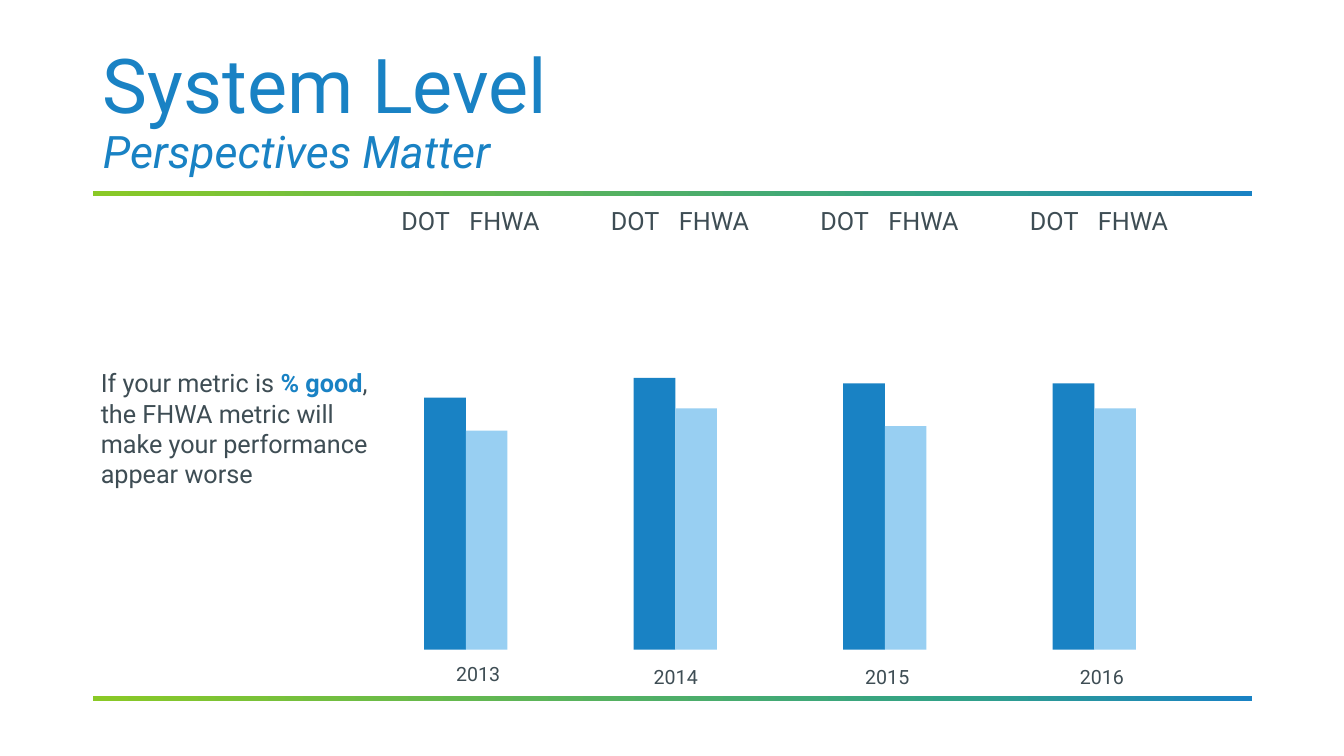
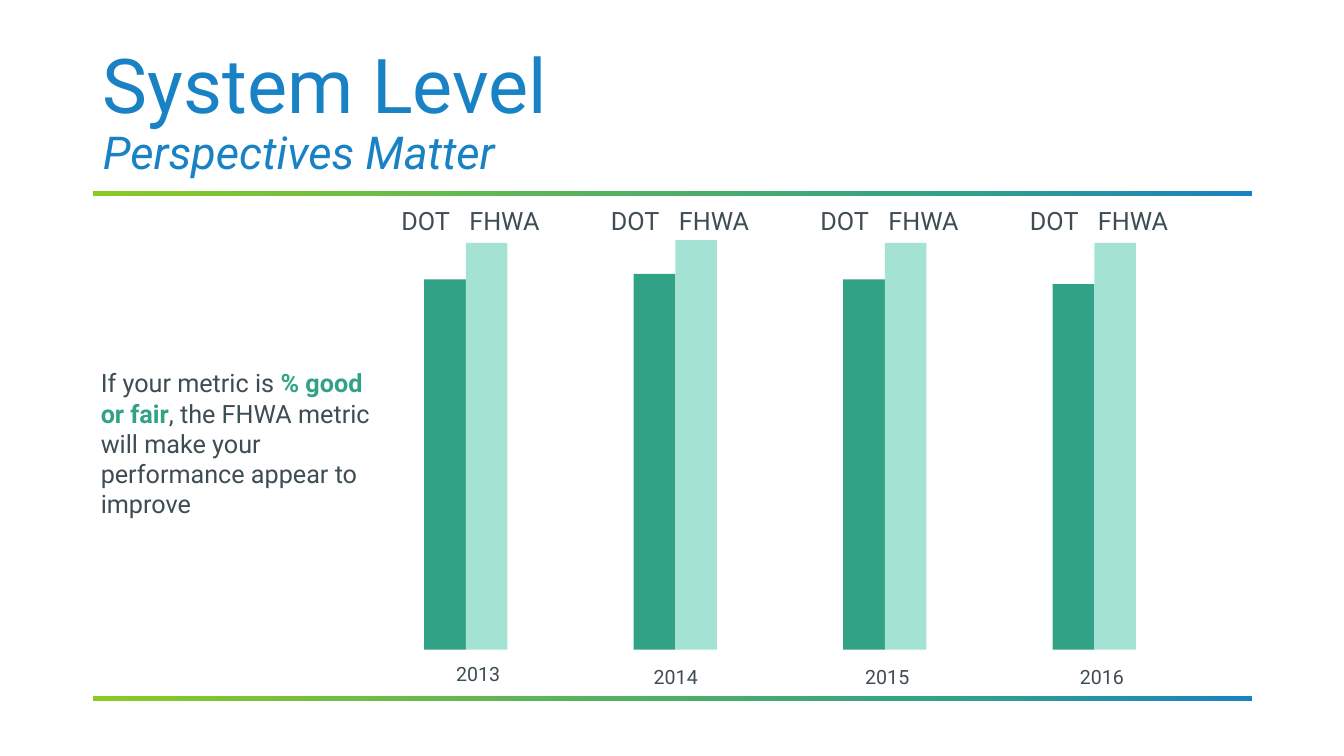
import copy

import pptx
import pptx.dml.color
import pptx.enum.shapes
import pptx.enum.text
import pptx.util

Cm = pptx.util.Cm
RGBColor = pptx.dml.color.RGBColor
Align = pptx.enum.text.PP_ALIGN
Anchor = pptx.enum.text.MSO_ANCHOR

# Shared style
FONT = "Roboto"
LIME = RGBColor(0x8A, 0xC9, 0x26)
GREEN = RGBColor(0x32, 0xA2, 0x87)
BLUE = RGBColor(0x19, 0x82, 0xC4)
PALE_BLUE = RGBColor(0x98, 0xCF, 0xF2)
PALE_GREEN = RGBColor(0xA4, 0xE3, 0xD4)
SLATE = RGBColor(0x3E, 0x4D, 0x54)
BAND_STOPS = [(0, LIME), (0.74, GREEN), (1, BLUE)]

# Shared geometry in centimetres
MARGIN, CONTENT_WIDTH = 2.34, 29.21
BAND_TOPS = [4.82, 17.53]
GROUP_LEFT, GROUP_PITCH = 10.69, 5.28
BAR_WIDTH, BASELINE = 1.05, 16.37
YEARS = [("2013", 10.92, 16.51), ("2014", 15.9, 16.59),
         ("2015", 21.23, 16.59), ("2016", 26.64, 16.59)]

# What differs between the slides; bar heights in centimetres
SLIDES = [
    dict(subtitle_size=32, colors=(BLUE, PALE_BLUE),
         metric="% good", note_height=3.33,
         effect=", the FHWA metric will make your performance appear worse",
         dot=[6.35, 6.85, 6.71, 6.71], fhwa=[5.52, 6.08, 5.63, 6.08]),
    dict(subtitle_size=32.4, colors=(GREEN, PALE_GREEN),
         metric="% good or fair", note_height=4.06,
         effect=", the FHWA metric will make your performance appear to improve",
         dot=[9.33, 9.47, 9.33, 9.21], fhwa=[10.25, 10.32, 10.25, 10.25]),
]


def add_text(paragraph, text, size=18, color=SLATE, bold=False, italic=False):
    """Add one formatted run to a paragraph."""
    run = paragraph.add_run()
    run.text = text
    font = run.font
    font.name, font.size = FONT, pptx.util.Pt(size)
    font.bold, font.italic = bold, italic
    font.color.rgb = color


class Deck:
    """Holds the presentation, its layout and the current slide."""

    def __init__(self):
        self.presentation = pptx.Presentation()
        self.presentation.slide_width = Cm(33.87)
        self.presentation.slide_height = Cm(19.05)
        self.layout = self.presentation.slide_layouts.get_by_name("Title Only")
        self.slide = None

    def add_slide(self):
        self.slide = self.presentation.slides.add_slide(self.layout)

    def rectangle(self, left, top, width, height, color=None):
        shape = self.slide.shapes.add_shape(
            pptx.enum.shapes.MSO_SHAPE.RECTANGLE,
            Cm(left), Cm(top), Cm(width), Cm(height))
        shape.shadow.inherit = False
        shape.line.fill.background()
        if color is not None:
            shape.fill.solid()
            shape.fill.fore_color.rgb = color
        return shape

    def layout_band(self, top, shape_id):
        """Draw a gradient band and move it to the shared layout."""
        band = self.rectangle(MARGIN, top, CONTENT_WIDTH, 0.13)
        band.fill.gradient()
        band.fill.gradient_angle = 0
        stop_list = band.element.xpath(".//a:gsLst")[0]
        stop_list.append(copy.deepcopy(stop_list[0]))
        for stop, (position, color) in zip(band.fill.gradient_stops, BAND_STOPS):
            stop.position = position
            stop.color.rgb = color
        band.element.nvSpPr.cNvPr.set("id", str(shape_id))
        self.layout.shapes.element.append(band.element)

    def title(self, text, subtitle, subtitle_size):
        title = self.slide.shapes.title
        title.left, title.top = Cm(MARGIN), Cm(1.02)
        title.width, title.height = Cm(CONTENT_WIDTH), Cm(3.68)
        frame = title.text_frame
        frame.auto_size = pptx.enum.text.MSO_AUTO_SIZE.NONE
        frame.vertical_anchor = Anchor.MIDDLE
        paragraph = frame.paragraphs[0]
        paragraph.alignment = Align.LEFT
        paragraph.line_spacing = 0.9
        add_text(paragraph, text, size=54, color=BLUE)
        paragraph.add_line_break()
        add_text(paragraph, subtitle, size=subtitle_size, color=BLUE, italic=True)

    def text_box(self, left, top, width, height, align=Align.LEFT,
                 anchor=Anchor.MIDDLE):
        """Add an empty text box and return its paragraph."""
        box = self.slide.shapes.add_textbox(Cm(left), Cm(top), Cm(width), Cm(height))
        frame = box.text_frame
        frame.word_wrap = True
        frame.vertical_anchor = anchor
        paragraph = frame.paragraphs[0]
        paragraph.alignment = align
        return paragraph

    def note(self, metric, effect, color, height):
        paragraph = self.text_box(2.29, 9.14, 7.62, height, anchor=Anchor.TOP)
        add_text(paragraph, "If your metric is ")
        add_text(paragraph, metric, color=color, bold=True)
        add_text(paragraph, effect)

    def bar_group(self, index, heights, colors):
        """Draw one year's pair of bars with its headings and year."""
        left = GROUP_LEFT + index * GROUP_PITCH
        for position, (height, color) in enumerate(zip(heights, colors)):
            self.rectangle(left + position * BAR_WIDTH, BASELINE - height,
                           BAR_WIDTH, height, color)
        add_text(self.text_box(left - 0.98, 5.11, 1.88, 0.91, Align.RIGHT), "DOT")
        add_text(self.text_box(left + 0.89, 5.11, 2.44, 0.91), "FHWA")
        year, year_left, year_top = YEARS[index]
        add_text(self.text_box(year_left, year_top, 2.26, 0.91, Align.CENTER),
                 year, size=14)


def main():
    deck = Deck()
    for number, content in enumerate(SLIDES):
        deck.add_slide()
        # Bands belong to the layout, so they are made once
        if number == 0:
            for band_id, top in enumerate(BAND_TOPS, start=101):
                deck.layout_band(top, band_id)
        # Title and explanation
        deck.title("System Level", "Perspectives Matter", content["subtitle_size"])
        deck.note(content["metric"], content["effect"],
                  content["colors"][0], content["note_height"])
        # Bars by year
        for index, heights in enumerate(zip(content["dot"], content["fhwa"])):
            deck.bar_group(index, heights, content["colors"])
    deck.presentation.save("out.pptx")


if __name__ == "__main__":
    main()
